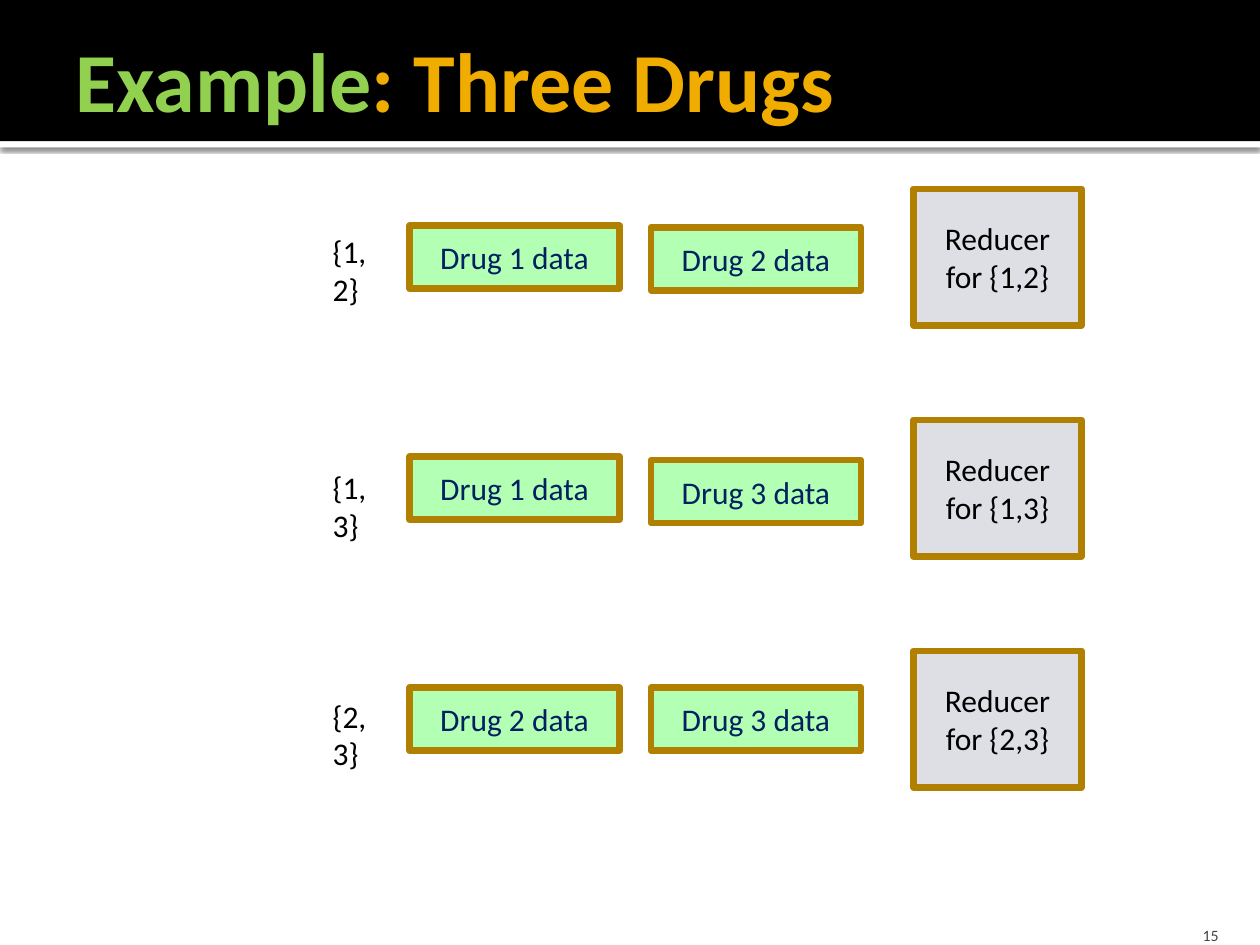
from lxml import etree
from pptx import Presentation
from pptx.dml.color import RGBColor
from pptx.enum.shapes import MSO_SHAPE
from pptx.enum.text import MSO_ANCHOR, PP_ALIGN
from pptx.util import Pt

RECTANGLE = MSO_SHAPE.RECTANGLE
TOP, MIDDLE, BOTTOM = MSO_ANCHOR.TOP, MSO_ANCHOR.MIDDLE, MSO_ANCHOR.BOTTOM
LEFT, CENTER, RIGHT = PP_ALIGN.LEFT, PP_ALIGN.CENTER, PP_ALIGN.RIGHT
FONT = "Calibri"
DRAWING_NS = "http://schemas.openxmlformats.org/drawingml/2006/main"

TITLE_PARTS = [("Example", "92D050"), (": Three Drugs", "F0AD00")]
PAGE_NUMBER = "15"
DRUG_PAIRS = [(1, 2), (1, 3), (2, 3)]

FIRST_ROW, ROW_PITCH = 108, 132
KEY_LEFT, KEY_SIZE, KEY_OFFSETS = 183, (51, 29), (21, 24, 22.5)
DRUG_LEFTS, DRUG_SIZE = (234, 372), (120, 36)
DRUG_OFFSETS = [(21, 22), (21, 23), (21, 21)]
REDUCER_LEFT, REDUCER_SIZE = 522, (96, 78)
BORDER, BORDER_WIDTH = "B28000", 3.78


def rgb(color):
    return RGBColor.from_string(color)


def write(shape, lines, size, color, align, anchor, margins=(7.2, 3.6, 7.2, 3.6)):
    frame = shape.text_frame
    frame.word_wrap = True
    frame.vertical_anchor = anchor
    frame.margin_left, frame.margin_top, frame.margin_right, frame.margin_bottom = map(Pt, margins)
    frame.text = "\n".join(lines)
    for paragraph in frame.paragraphs:
        paragraph.alignment = align
        paragraph.font.name = FONT
        paragraph.font.size = Pt(size)
        paragraph.font.color.rgb = rgb(color)


def add_box(slide, left, top, size, fill):
    box = slide.shapes.add_shape(RECTANGLE, Pt(left), Pt(top), Pt(size[0]), Pt(size[1]))
    box.shadow.inherit = False
    box.fill.solid()
    box.fill.fore_color.rgb = rgb(fill)
    box.line.fill.background()
    return box


def add_data_box(slide, left, top, size, fill, lines, color):
    box = add_box(slide, left, top, size, fill)
    box.line.color.rgb = rgb(BORDER)
    box.line.width = Pt(BORDER_WIDTH)
    write(box, lines, 18, color, CENTER, MIDDLE)


def add_label(slide, left, top, size, text, *style):
    label = slide.shapes.add_textbox(Pt(left), Pt(top), Pt(size[0]), Pt(size[1]))
    write(label, [text], *style)


def add_drop_shadow(shape):
    effects = shape._element.spPr.find(f"{{{DRAWING_NS}}}effectLst")
    effects.append(etree.fromstring(
        f'<a:outerShdw xmlns:a="{DRAWING_NS}" blurRad="{Pt(2.5)}" dist="{Pt(0.8)}" '
        'dir="5400000" algn="t" rotWithShape="0">'
        '<a:srgbClr val="000000"><a:alpha val="60000"/></a:srgbClr></a:outerShdw>'))


def add_header(slide):
    add_drop_shadow(add_box(slide, 0, 80.64, (720, 3.6), "FFFFFF"))
    add_box(slide, 0, 0, (720, 80.64), "000000")
    title = slide.shapes.title
    slide.shapes._spTree.append(title._element)
    title.left, title.top, title.width, title.height = map(Pt, (36, 12.24, 684, 66.24))
    write(title, [""], 48, TITLE_PARTS[0][1], LEFT, MIDDLE, (7.2, 3.6, 3.6, 3.6))
    heading = title.text_frame.paragraphs[0]
    heading.font.bold = True
    for text, color in TITLE_PARTS:
        run = heading.add_run()
        run.text = text
        run.font.color.rgb = rgb(color)


def add_pair_row(slide, row, pair):
    top = FIRST_ROW + row * ROW_PITCH
    first, second = pair
    add_label(slide, KEY_LEFT, top + KEY_OFFSETS[row], KEY_SIZE,
              f"{{{first}, {second}}}", 18, "000000", LEFT, TOP)
    for drug, left, offset in zip(pair, DRUG_LEFTS, DRUG_OFFSETS[row]):
        add_data_box(slide, left, top + offset, DRUG_SIZE, "B3FFB3",
                     [f"Drug {drug} data"], "002060")
    add_data_box(slide, REDUCER_LEFT, top, REDUCER_SIZE, "DDDFE5",
                 ["Reducer", f"for {{{first},{second}}}"], "000000")


def main():
    """Build the slide that shows which reducer receives each pair of drugs."""
    deck = Presentation()
    deck.slide_width, deck.slide_height = Pt(720), Pt(540)
    slide = deck.slides.add_slide(deck.slide_layouts[5])
    add_header(slide)
    add_label(slide, 645.84, 518.4, (57.6, 21.6), PAGE_NUMBER, 9, "454545",
              RIGHT, BOTTOM, (7.2, 3.6, 7.2, 0))
    for row, pair in enumerate(DRUG_PAIRS):
        add_pair_row(slide, row, pair)
    deck.save("out.pptx")


if __name__ == "__main__":
    main()
